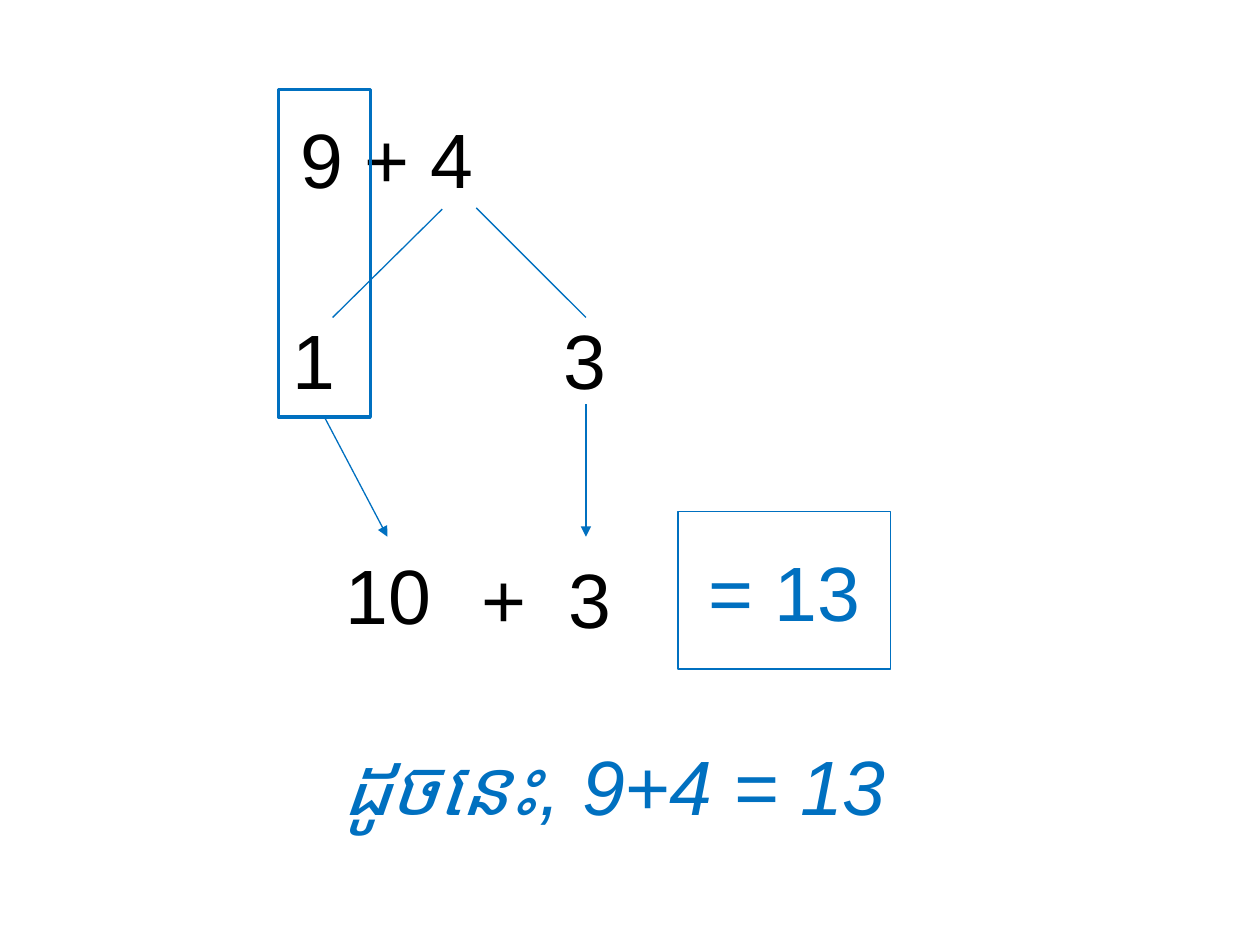
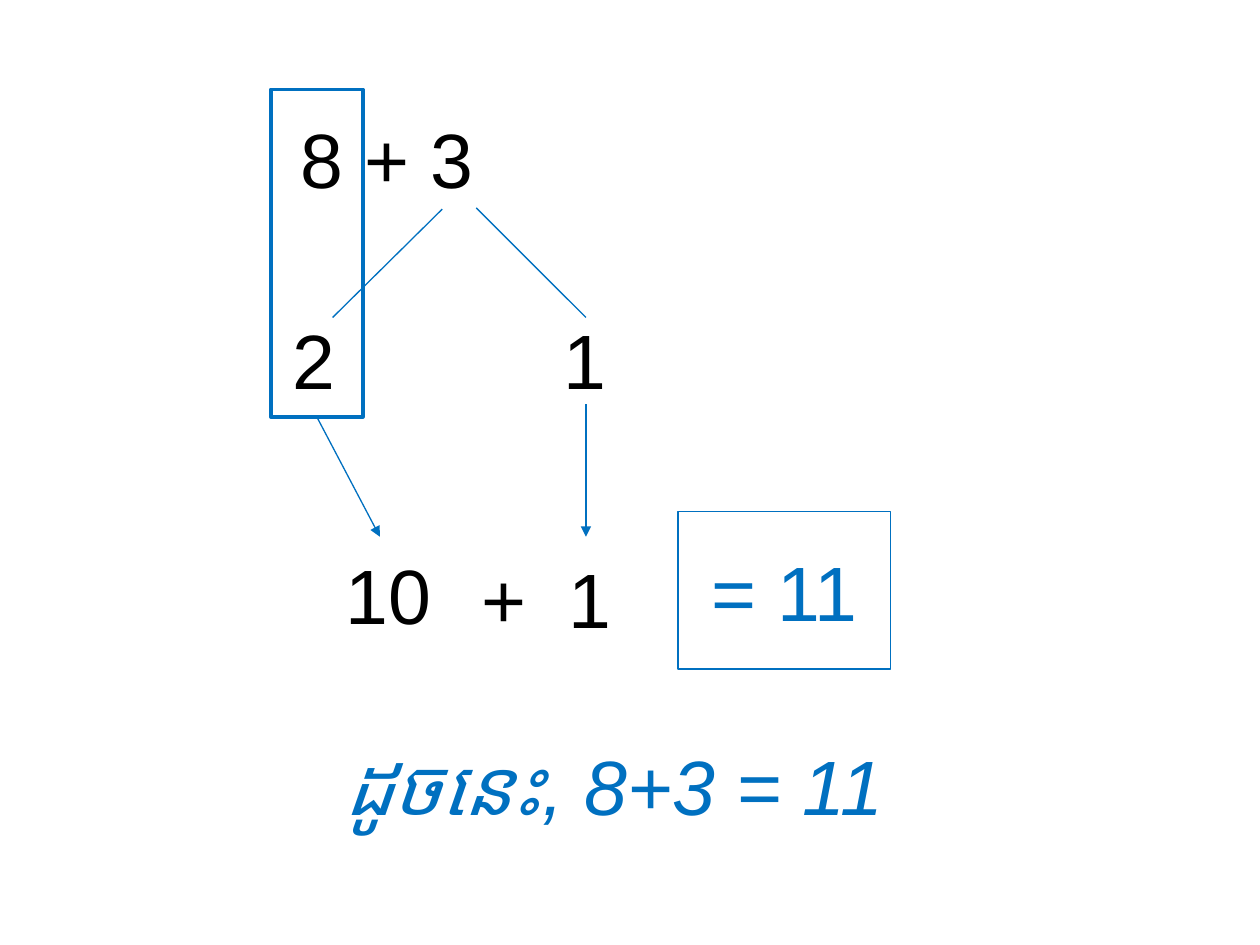
from lxml import etree
from pptx import Presentation
from pptx.dml.color import RGBColor
from pptx.enum.shapes import MSO_CONNECTOR, MSO_SHAPE
from pptx.enum.text import MSO_ANCHOR, MSO_AUTO_SIZE, PP_ALIGN
from pptx.oxml.ns import qn
from pptx.util import Inches, Pt

STRAIGHT = MSO_CONNECTOR.STRAIGHT
RECTANGLE = MSO_SHAPE.RECTANGLE
MIDDLE = MSO_ANCHOR.MIDDLE
NO_AUTOFIT = MSO_AUTO_SIZE.NONE
CENTER = PP_ALIGN.CENTER
TITLE_ONLY = 5
BOTTOM = 2

# Grid of 100 columns by 75 rows
COLUMNS, ROWS = 100, 75
WIDTH, HEIGHT = Inches(10), Inches(7.5)

BLUE, BLACK = "0070C0", "000000"
NUMBER_SIZE = (16.9, 12.5)
FRAME_FORMAT = {"word_wrap": True, "auto_size": NO_AUTOFIT,
                "vertical_anchor": MIDDLE,
                "margin_left": Inches(0.1), "margin_right": Inches(0.1),
                "margin_top": Inches(0.05), "margin_bottom": Inches(0.05)}
FONT_FORMAT = {"name": "Arial", "size": Pt(44), "bold": False, "italic": False}


def color(hex_string):
    return RGBColor.from_string(hex_string)


def apply_format(target, values):
    for name, value in values.items():
        setattr(target, name, value)


class Board:
    """Holds the presentation style and the slide being drawn."""

    def __init__(self):
        self.presentation = Presentation()
        self.presentation.slide_width = WIDTH
        self.presentation.slide_height = HEIGHT
        self.slide = None

    def new_slide(self):
        layout = self.presentation.slide_layouts[TITLE_ONLY]
        self.slide = self.presentation.slides.add_slide(layout)

    def place(self, *lengths):
        """Turn alternating columns and rows into slide lengths."""
        units = (WIDTH / COLUMNS, HEIGHT / ROWS)
        return [round(length * units[index % 2])
                for index, length in enumerate(lengths)]

    def fill_text(self, shape, runs, text_color=BLACK):
        """Each run is a text with the font values that differ."""
        apply_format(shape.text_frame, FRAME_FORMAT)
        paragraph = shape.text_frame.paragraphs[0]
        paragraph.alignment = CENTER
        for text, changes in runs:
            run = paragraph.add_run()
            run.text = text
            apply_format(run.font, FONT_FORMAT | changes)
            run.font.color.rgb = color(text_color)
        return paragraph

    def title(self, text, *area):
        shape = self.slide.shapes.title
        apply_format(shape, dict(zip(("left", "top", "width", "height"),
                                     self.place(*area))))
        self.fill_text(shape, [(text, {})])

    def label(self, runs, *area, text_color=BLACK):
        shape = self.slide.shapes.add_textbox(*self.place(*area))
        return self.fill_text(shape, runs, text_color)

    def box(self, runs, line_width, *area):
        shape = self.slide.shapes.add_shape(RECTANGLE, *self.place(*area))
        shape.shadow.inherit = False
        shape.fill.background()
        shape.line.color.rgb = color(BLUE)
        shape.line.width = Pt(line_width)
        self.fill_text(shape, runs, BLUE)
        return shape

    def line(self, *ends, arrow=False, source=None):
        connector = self.slide.shapes.add_connector(STRAIGHT, *self.place(*ends))
        connector.line.color.rgb = color(BLUE)
        connector.line.width = Pt(0.75)
        if arrow:
            outline = connector.line._get_or_add_ln()
            etree.SubElement(outline, qn("a:tailEnd"), type="triangle")
        etree.SubElement(connector._element.spPr, qn("a:effectLst"))
        if source is not None:
            connector.begin_connect(source, BOTTOM)


def draw_sum(board, first, second, box_left):
    """Split the second number so that the first is filled up to ten."""
    to_ten = 10 - first
    rest = second - to_ten
    total = first + second
    board.new_slide()

    # The sum and the two parts of its second number
    board.title(f"{first} + {second}", -14.3, 6.3, 90, 12.5)
    board.line(35.1, 16.6, 26.4, 25.2)
    board.line(37.8, 16.5, 46.5, 25.2)
    for part, left in ((to_ten, 16.5), (rest, 38)):
        board.label([(str(part), {})], left, 22.2, *NUMBER_SIZE)

    # The pair that makes ten
    ten_box = board.box([], 2, box_left, 7.1, 7.3, 26)
    box_middle = box_left + 7.3 / 2
    board.label([("10", {})], 25.9, 40.9, 9.8, 12.5)
    board.line(box_middle, 33.1, box_middle + 5, 42.6, arrow=True, source=ten_box)

    # Ten plus the rest, with a widened gap after the plus sign
    board.line(46.5, 32.1, 46.5, 42.6, arrow=True)
    paragraph = board.label([("+", {}), (" ", {}), (str(rest), {})],
                            34.9, 41.2, *NUMBER_SIZE)
    paragraph.runs[1].font._element.set("spc", "1200")

    # Result and conclusion
    board.box([(f"= {total}", {})], 0.75, 53.8, 40.6, *NUMBER_SIZE)
    board.label([("ដូចនេះ", {"name": "Lato", "italic": True}),
                 (f", {first}+{second} = {total}", {"italic": True})],
                12.2, 56, 73.1, 12.5, text_color=BLUE)


def main():
    board = Board()
    for first, second, box_left in ((9, 4, 22.1), (8, 3, 21.5)):
        draw_sum(board, first, second, box_left)
    board.presentation.save("out.pptx")


if __name__ == "__main__":
    main()
